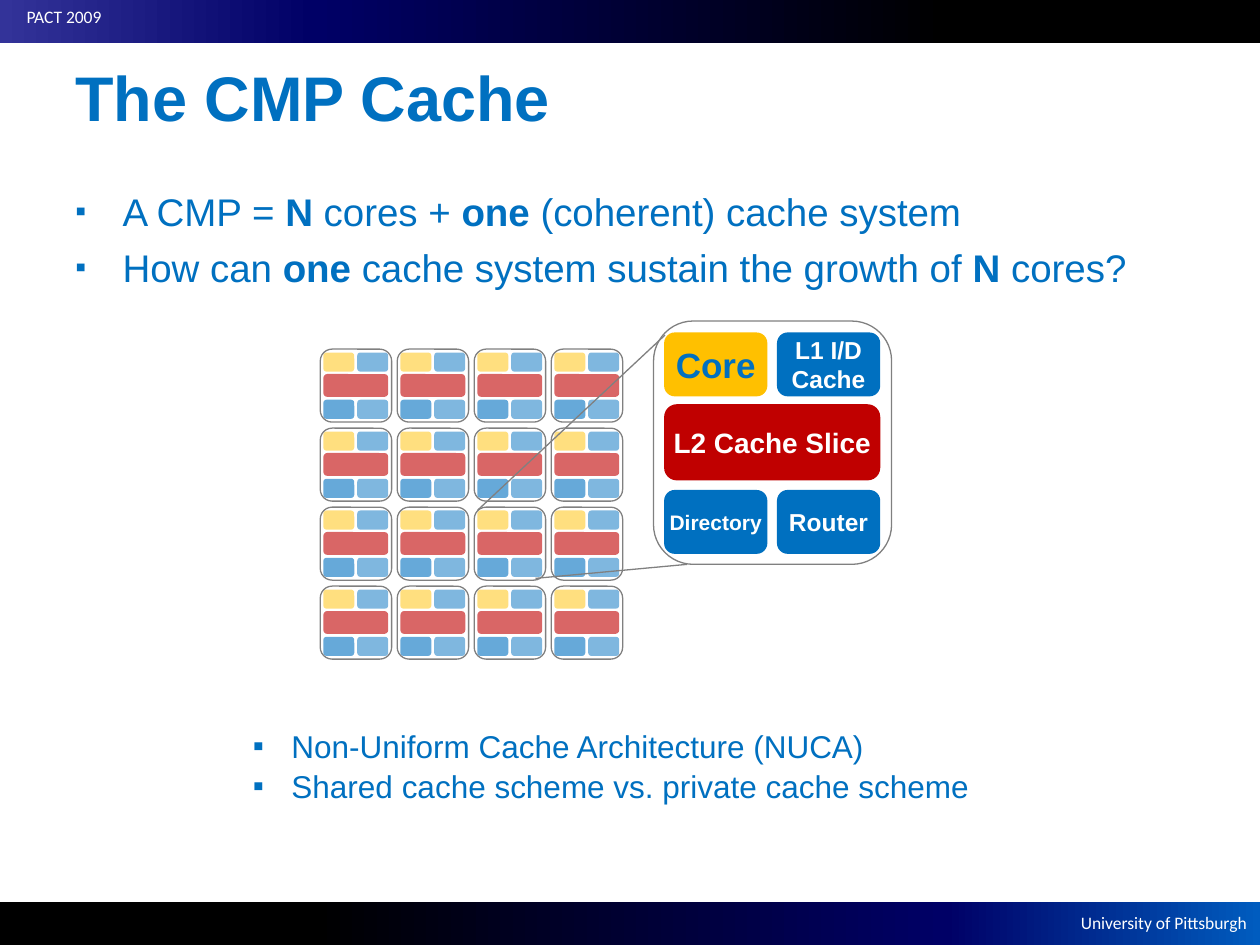
from lxml import etree
from pptx import Presentation
from pptx.dml.color import RGBColor
from pptx.enum import shapes, text
from pptx.oxml import ns
from pptx.util import Pt

HUES = {"blue": "0070C0", "gold": "FFC000", "red": "C00000", "gray": "808080",
        "white": "FFFFFF", "black": "000000", "navy": "000066",
        "violet": "333399", "azure": "005CBF"}
ALIGN, MID = text.PP_ALIGN, text.MSO_ANCHOR.MIDDLE

# Parts of a core tile at full size: left, top, width, height, hue,
# opacity in a small tile, label, text size, text hue
TILE = (136, 139)
PARTS = [
    (6, 6.5, 59, 36.5, "gold", 50, "Core", 20, "blue"),
    (70.5, 6.5, 59, 36.5, "blue", 50, "L1 I/D\nCache", 14, "white"),
    (6, 47.5, 123.5, 43.5, "red", 60, "L2 Cache Slice", 16, "white"),
    (6, 96.5, 59, 36.5, "blue", 60, "Directory", 12, "white"),
    (70.5, 96.5, 59, 36.5, "blue", 50, "Router", 14, "white"),
]


def rgb(hue):
    return RGBColor.from_string(HUES[hue])


def add(parent, tag, **attrs):
    return etree.SubElement(parent, ns.qn(tag), attrs)


def style(para, size, hue, face="Arial", bold=False):
    for run in para.runs:
        run.font.name, run.font.size = face, Pt(size)
        run.font.color.rgb = rgb(hue)
        run.font.bold = bold


def shape(slide, box, kind=shapes.MSO_SHAPE.ROUNDED_RECTANGLE):
    item = slide.shapes.add_shape(kind, *map(Pt, box))
    item.shadow.inherit = False
    item.line.fill.background()
    return item


def paint(item, hue, alpha=100):
    item.fill.solid()
    item.fill.fore_color.rgb = rgb(hue)
    if alpha < 100:
        clr = item.fill._xPr.find(".//" + ns.qn("a:srgbClr"))
        add(clr, "a:alpha", val=str(alpha * 1000))


def label(slide, box, words, size, hue, face="Arial", bold=False,
          align=ALIGN.LEFT, anchor=text.MSO_ANCHOR.TOP, wrap=True):
    frame = slide.shapes.add_textbox(*map(Pt, box)).text_frame
    frame.word_wrap, frame.vertical_anchor = wrap, anchor
    frame.text = words
    para = frame.paragraphs[0]
    para.alignment = align
    style(para, size, hue, face, bold)


def band(slide, box, hues, words, spot):
    """Gradient strip with a small caption."""
    bar = shape(slide, box, shapes.MSO_SHAPE.RECTANGLE)
    bar.fill.gradient()
    bar.fill.gradient_angle = 0
    stops = bar.fill._xPr.find(".//" + ns.qn("a:gsLst"))
    for stop in list(stops):
        stops.remove(stop)
    for pos, hue in zip((0, 25, 75, 100), hues):
        stop = add(stops, "a:gs", pos=str(pos * 1000))
        add(stop, "a:srgbClr", val=HUES[hue])
    label(slide, spot, words, 10, "white", "Calibri", align=ALIGN.RIGHT, wrap=False)


def bullets(slide, box, lines, size, indent, gap, scale):
    """Bulleted list; words between asterisks are bold."""
    frame = slide.shapes.add_textbox(*map(Pt, box)).text_frame
    frame.word_wrap = True
    for i, line in enumerate(lines):
        para = frame.paragraphs[0] if i == 0 else frame.add_paragraph()
        props = para._p.get_or_add_pPr()
        props.set("marL", str(Pt(indent)))
        props.set("indent", str(-Pt(indent)))
        add(add(props, "a:buClr"), "a:srgbClr", val=HUES["blue"])
        add(props, "a:buSzPct", val=str(scale * 1000))
        add(props, "a:buFont", typeface="Arial")
        add(props, "a:buChar", char="▪")
        if i:
            para.space_before = Pt(gap)
        pieces = line.split("*")
        for piece in pieces:
            para.add_run().text = piece
        style(para, size, "blue")
        for run in para.runs[1::2]:
            run.font.bold = True


def outline(slide, box):
    frame = shape(slide, box)
    frame.fill.background()
    frame.line.color.rgb = rgb("gray")
    frame.line.width = Pt(0.75)
    return frame


def tile(slide, left, top, scale):
    """Small unlabelled core tile."""
    for x, y, w, h, hue, alpha, *_ in PARTS:
        box = (left + x * scale, top + y * scale, w * scale, h * scale)
        paint(shape(slide, box), hue, alpha)
    outline(slide, (left, top, TILE[0] * scale, TILE[1] * scale))


def grid(slide, left, top, count, step_x, step_y):
    for row in range(count):
        for col in range(count):
            tile(slide, left + col * step_x, top + row * step_y, 0.3)


def detail(slide, left, top):
    """Enlarged core tile with labels."""
    paint(outline(slide, (left, top, *TILE)), "white", 80)
    for x, y, w, h, hue, _, words, size, ink in PARTS:
        part = shape(slide, (left + x, top + y, w, h))
        paint(part, hue)
        frame = part.text_frame
        frame.margin_left = frame.margin_right = 0
        frame.margin_top = frame.margin_bottom = 0
        frame.word_wrap, frame.vertical_anchor = False, MID
        frame.text = words
        for para in frame.paragraphs:
            para.alignment = ALIGN.CENTER
            style(para, size, ink, bold=True)


def link(slide, *ends):
    line = slide.shapes.add_connector(shapes.MSO_CONNECTOR.STRAIGHT, *map(Pt, ends))
    line.line.color.rgb = rgb("gray")
    line.line.width = Pt(0.75)
    add(line._element.spPr, "a:effectLst")


def main():
    deck = Presentation()
    deck.slide_width, deck.slide_height = Pt(720), Pt(540)
    slide = deck.slides.add_slide(deck.slide_layouts[6])

    # Footer and header
    band(slide, (0, 515.5, 720, 24.5), ("black", "black", "navy", "azure"),
         "University of Pittsburgh", (600, 517.5, 119.5, 19.5))
    band(slide, (0, 0, 720, 24.5), ("violet", "navy", "black", "black"),
         "PACT 2009", (0, 0, 65, 19.5))

    # Title and main points
    label(slide, (36, 10, 648, 90), "The CMP Cache", 36, "blue", bold=True, anchor=MID)
    bullets(slide, (36, 104, 648, 388),
            ["A CMP = *N* cores + *one* (coherent) cache system",
             "How can *one* cache system sustain the growth of *N* cores?"],
            22, 27, 5.4, 80)

    # Core array, enlarged core and zoom lines
    grid(slide, 183, 199.5, 4, 44, 45.15)
    detail(slide, 373.5, 183.5)
    link(slide, 380, 191.5, 273, 291.5)
    link(slide, 392.5, 322.5, 306, 330.5)

    # Closing points
    bullets(slide, (137.5, 412, 424, 71),
            ["Non-Uniform Cache Architecture (NUCA)",
             "Shared cache scheme vs. private cache scheme"], 18, 22, 1, 100)
    deck.save("out.pptx")


if __name__ == "__main__":
    main()
